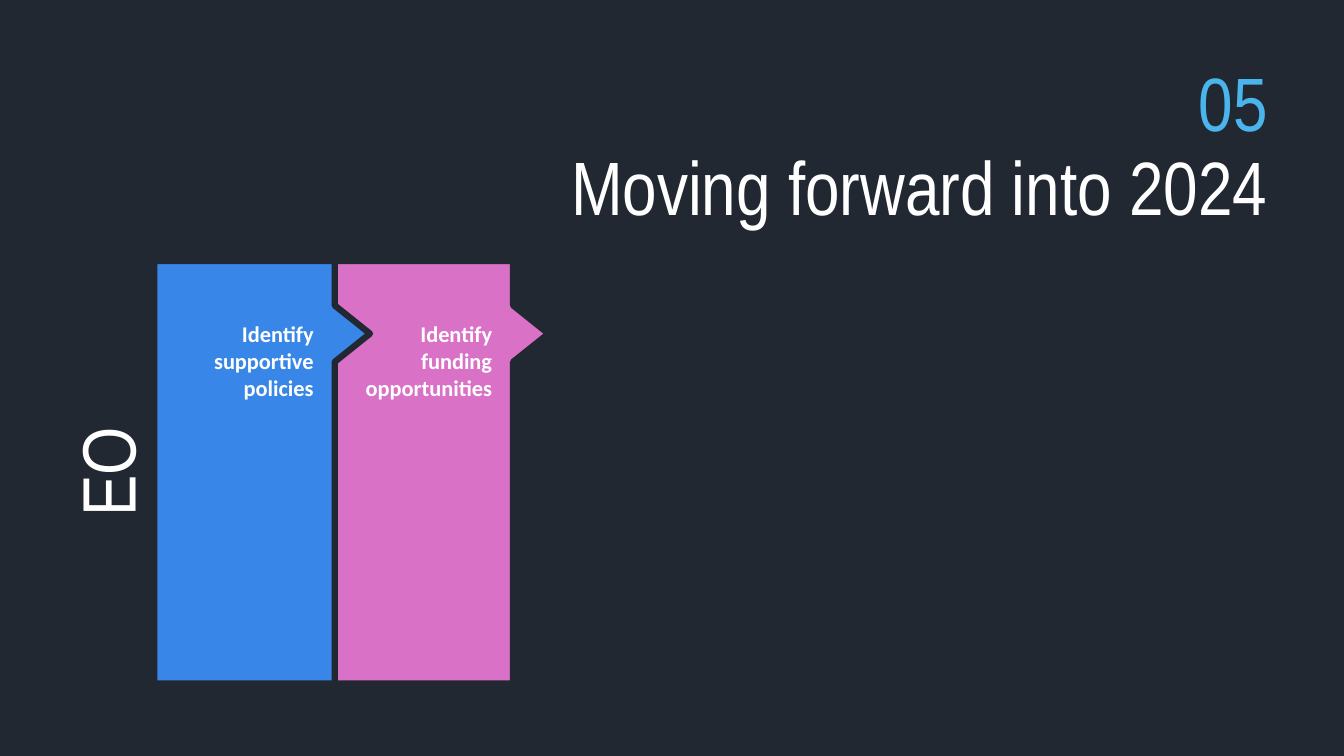
"""Build the section slide with two arrow-edged step panels."""
import pptx
import pptx.util
import pptx.dml.color
import pptx.enum.text

WIDTH, HEIGHT = 13.33, 7.5
DARK, WHITE, SKY = "212831", "FFFFFF", "4AB5EC"
HEADING = ("Arial Narrow", 54, False)
LABEL = ("Calibri", 16, True)
RIGHT, LEFT = pptx.enum.text.PP_ALIGN.RIGHT, pptx.enum.text.PP_ALIGN.LEFT

TITLE = ("Moving forward into 2024", (5.36, 1.34, 7.31, 1.01))
NUMBER = ("05", (7.45, 0.51, 5.22, 1.01))
SIDE = ("EO", (0.19, 3.86, 1.72, 1.01))
STEPS = [
    ("Identify supportive policies", "3887E8"),
    ("Identify funding opportunities", "D971C6"),
]
STEP_LEFT, STEP_PITCH, STEP_TOP = 1.53, 1.77, 2.59
PANEL_OUTLINE = [(0, 0), (1.79, 0), (1.79, 0.44), (2.14, 0.72),
                 (1.79, 1), (1.79, 4.19), (0, 4.19)]
LABEL_OFFSET, LABEL_SIZE = (0.02, 0.54), (1.66, 0.91)


def color(value):
    return pptx.dml.color.RGBColor.from_string(value)


def inches(values):
    return [pptx.util.Inches(v) for v in values]


def write(sp, text, box, style, ink, align=RIGHT):
    sp.left, sp.top, sp.width, sp.height = inches(box)
    tf = sp.text_frame
    tf.word_wrap = True
    tf.auto_size = pptx.enum.text.MSO_AUTO_SIZE.NONE
    tf.vertical_anchor = pptx.enum.text.MSO_ANCHOR.TOP
    p = tf.paragraphs[0]
    p.alignment = align
    r = p.add_run()
    r.text = text
    r.font.name, size, r.font.bold = style
    r.font.size = pptx.util.Pt(size)
    r.font.color.rgb = color(ink)


def add_text(s, text, box, *look):
    sp = s.shapes.add_textbox(*inches(box))
    write(sp, text, box, *look)
    return sp


def add_panel(s, left, fill):
    points = [inches((left + x, STEP_TOP + y)) for x, y in PANEL_OUTLINE]
    builder = s.shapes.build_freeform(*points[0])
    builder.add_line_segments(points[1:], close=True)
    sp = builder.convert_to_shape()
    sp.shadow.inherit = False
    sp.fill.solid()
    sp.fill.fore_color.rgb = color(fill)
    sp.line.color.rgb = color(DARK)
    sp.line.width = pptx.util.Pt(4.5)


def main():
    prs = pptx.Presentation()
    prs.slide_width, prs.slide_height = inches((WIDTH, HEIGHT))
    s = prs.slides.add_slide(prs.slide_layouts.get_by_name("Title Only"))
    s.background.fill.solid()
    s.background.fill.fore_color.rgb = color(DARK)

    write(s.shapes.title, *TITLE, HEADING, WHITE)
    add_text(s, *NUMBER, HEADING, SKY)
    add_text(s, *SIDE, HEADING, WHITE, LEFT).rotation = 270

    for i, (text, fill) in reversed(list(enumerate(STEPS))):
        left = STEP_LEFT + i * STEP_PITCH
        add_panel(s, left, fill)
        dx, dy = LABEL_OFFSET
        add_text(s, text, (left + dx, STEP_TOP + dy, *LABEL_SIZE), LABEL, WHITE)

    prs.save("out.pptx")


if __name__ == "__main__":
    main()
